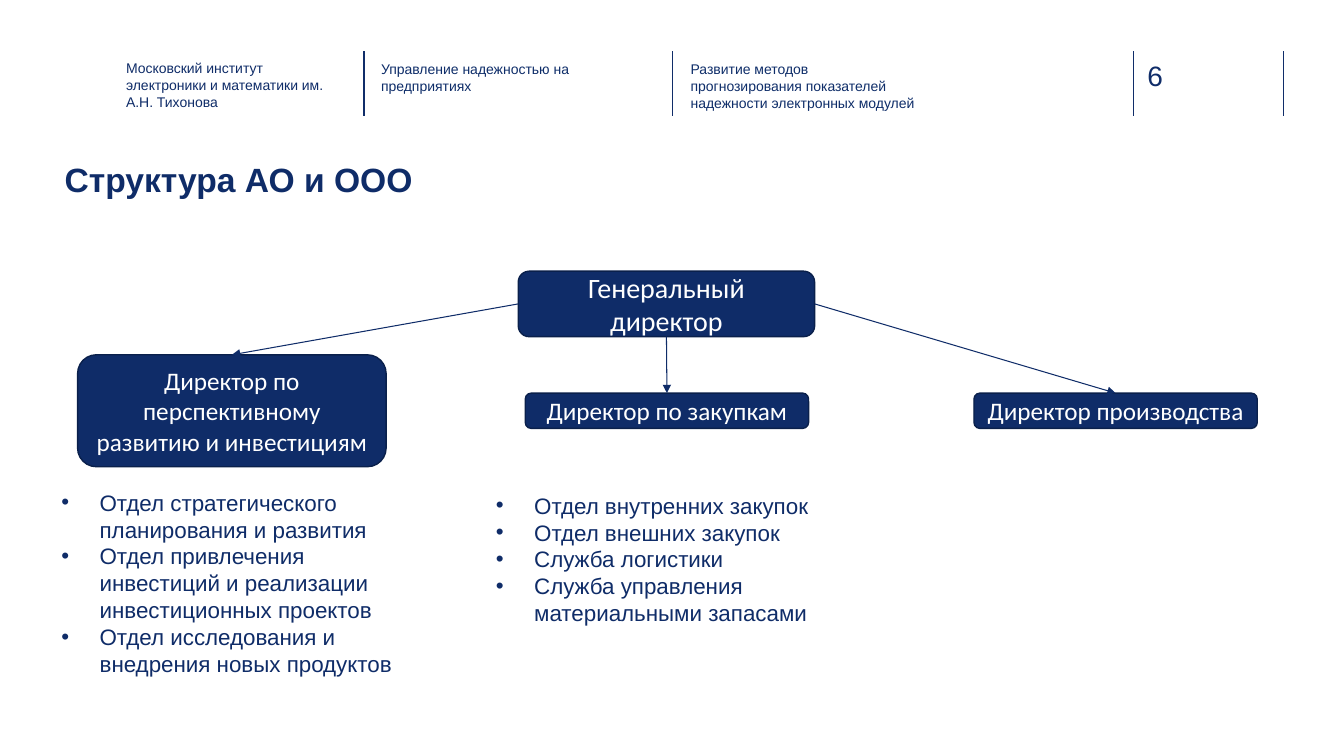
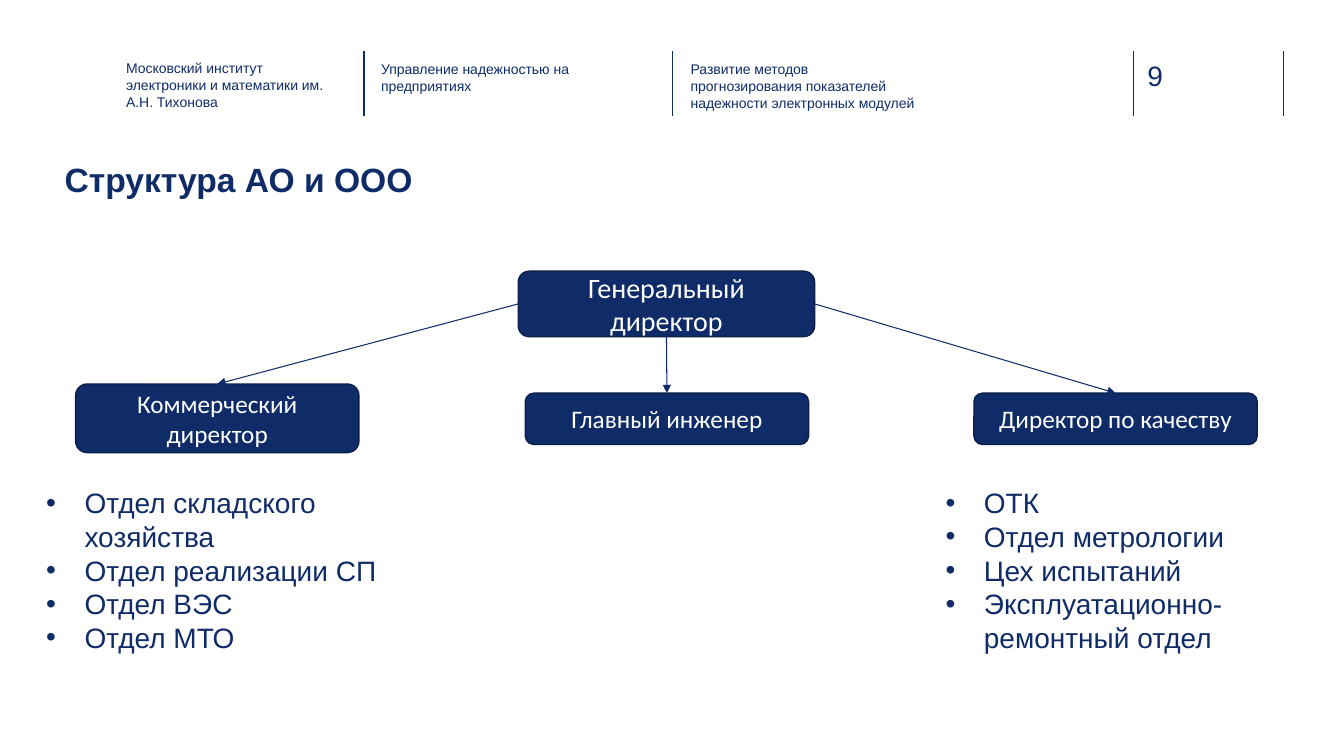
"""Build two organisation-chart slides with a shared header band."""
import pptx
import pptx.chart.data
import pptx.dml.color
import pptx.enum.shapes
import pptx.enum.text
import pptx.oxml
import pptx.oxml.ns
import pptx.util
from pptx.util import Inches

COLORS = {"navy": "0F2C68", "band": "102D69", "header": "0E2D69", "edge": "0A204B", "white": "FFFFFF"}
RULES = [3.61, 6.67, 11.24, 12.73]
HEADERS = [
    (1.25, 0.59, 2.08, "navy", "Московский институт электроники и математики им. А.Н. Тихонова"),
    (3.78, 0.6, 2.26, "header", "Управление надежностью на предприятиях"),
    (6.85, 0.6, 2.26, "header", "Развитие методов прогнозирования показателей надежности электронных модулей"),
]
TITLE = "Структура АО и ООО"
CHIEF = (5.14, 2.69, 2.94, 0.65, "Генеральный директор")
SLIDES = [
    {
        "number": "6",
        "directors": [
            (0.77, 3.52, 3.06, 1.11, "Директор по перспективному развитию и инвестициям"),
            (5.21, 3.9, 2.81, 0.35, "Директор по закупкам"),
            (9.66, 3.9, 2.81, 0.35, "Директор производства"),
        ],
        "list_size": 16,
        "lists": [
            (0.51, 4.8, 1.99, [
                "Отдел стратегического планирования и развития",
                "Отдел привлечения инвестиций и реализации инвестиционных проектов",
                "Отдел исследования и внедрения новых продуктов",
            ]),
            (4.82, 4.83, 1.45, [
                "Отдел внутренних закупок",
                "Отдел внешних закупок",
                "Служба логистики",
                "Служба управления материальными запасами",
            ]),
        ],
    },
    {
        "number": "9",
        "directors": [
            (0.75, 3.81, 2.81, 0.68, "Коммерческий директор"),
            (5.21, 3.9, 2.81, 0.51, "Главный инженер"),
            (9.66, 3.9, 2.81, 0.51, "Директор по качеству"),
        ],
        "list_size": 20,
        "lists": [
            (0.36, 4.77, 1.78, [
                "Отдел складского хозяйства",
                "Отдел реализации СП",
                "Отдел ВЭС",
                "Отдел МТО",
            ]),
            (9.28, 4.77, 1.78, [
                "ОТК",
                "Отдел метрологии",
                "Цех испытаний",
                "Эксплуатационно-ремонтный отдел",
            ]),
        ],
    },
]


def write(shape, lines, size, color, font="Arial", inset=(0, 0), align="LEFT", anchor="TOP", bold=False, bullets=False):
    frame = shape.text_frame
    frame.word_wrap = True
    frame.auto_size = pptx.enum.text.MSO_AUTO_SIZE.NONE
    frame.vertical_anchor = getattr(pptx.enum.text.MSO_ANCHOR, anchor)
    frame.margin_left = frame.margin_right = Inches(inset[0])
    frame.margin_top = frame.margin_bottom = Inches(inset[1])
    frame.text = "\n".join(lines)
    for para in frame.paragraphs:
        para.alignment = getattr(pptx.enum.text.PP_ALIGN, align)
        if bullets:
            properties = para._p.get_or_add_pPr()
            properties.set("marL", str(Inches(0.38)))
            properties.set("indent", str(-Inches(0.38)))
            color_mark = pptx.oxml.ns.qn("a:buClr")
            mark_color = properties.makeelement(color_mark, {})
            mark_color.append(mark_color.makeelement(pptx.oxml.ns.qn("a:srgbClr"), {"val": COLORS[color]}))
            properties.append(mark_color)
            for tag, key, value in [("a:buFont", "typeface", "Arial"), ("a:buChar", "char", "•")]:
                properties.append(properties.makeelement(pptx.oxml.ns.qn(tag), {key: value}))
        para.font.name = font
        para.font.size = pptx.util.Pt(size)
        para.font.bold = bold
        para.font.color.rgb = pptx.dml.color.RGBColor.from_string(COLORS[color])


def add_line(page, start, end, color, width, arrow=False):
    points = [Inches(value) for value in (*start, *end)]
    line = page.shapes.add_connector(pptx.enum.shapes.MSO_CONNECTOR.STRAIGHT, *points)
    line.line.color.rgb = pptx.dml.color.RGBColor.from_string(COLORS[color])
    line.line.width = pptx.util.Pt(width)
    if arrow:
        outline = line.line._get_or_add_ln()
        outline.append(outline.makeelement(pptx.oxml.ns.qn("a:tailEnd"), {"type": "triangle"}))
    properties = line._element.spPr
    properties.append(properties.makeelement(pptx.oxml.ns.qn("a:effectLst"), {}))
    return line


deck = pptx.Presentation()
deck.slide_width = Inches(13.33)
deck.slide_height = Inches(7.5)

for content in SLIDES:
    page = deck.slides.add_slide(deck.slide_layouts[5])
    title = page.shapes.title
    title.left, title.top, title.width, title.height = [Inches(value) for value in (0.64, 1.58, 11.94, 0.77)]
    write(title, [TITLE], 24, "navy", bold=True)

    for x in RULES:
        add_line(page, (x, 0.51), (x, 1.15), "band", 1)
    for left, top, width, color, text in HEADERS:
        header = page.shapes.add_textbox(Inches(left), Inches(top), Inches(width), Inches(0.45))
        write(header, [text], 10, color)
    number = page.shapes.add_textbox(Inches(11.38), Inches(0.58), Inches(0.73), Inches(0.34))
    write(number, [content["number"]], 20, "band")

    boxes = []
    for left, top, width, height, text in [CHIEF, *content["directors"]]:
        box = page.shapes.add_shape(
            pptx.enum.shapes.MSO_SHAPE.ROUNDED_RECTANGLE, Inches(left), Inches(top), Inches(width), Inches(height))
        box.shadow.inherit = False
        box.fill.solid()
        box.fill.fore_color.rgb = pptx.dml.color.RGBColor.from_string(COLORS["navy"])
        box.line.color.rgb = pptx.dml.color.RGBColor.from_string(COLORS["edge"])
        box.line.width = pptx.util.Pt(1)
        size = 18 if boxes else 20
        write(box, [text], size, "white", "Calibri", (0.1, 0.05), "CENTER", "MIDDLE")
        boxes.append(box)

    chief, *directors = boxes
    for side, director in zip([1, 2, 3], directors):
        arrow = add_line(page, (0, 0), (1, 1), "navy", 0.75, arrow=True)
        arrow.begin_connect(chief, side)
        arrow.end_connect(director, 0)

    for left, top, height, items in content["lists"]:
        listing = page.shapes.add_textbox(Inches(left), Inches(top), Inches(3.58), Inches(height))
        write(listing, items, content["list_size"], "navy", inset=(0.1, 0.05), bullets=True)

deck.save("out.pptx")
